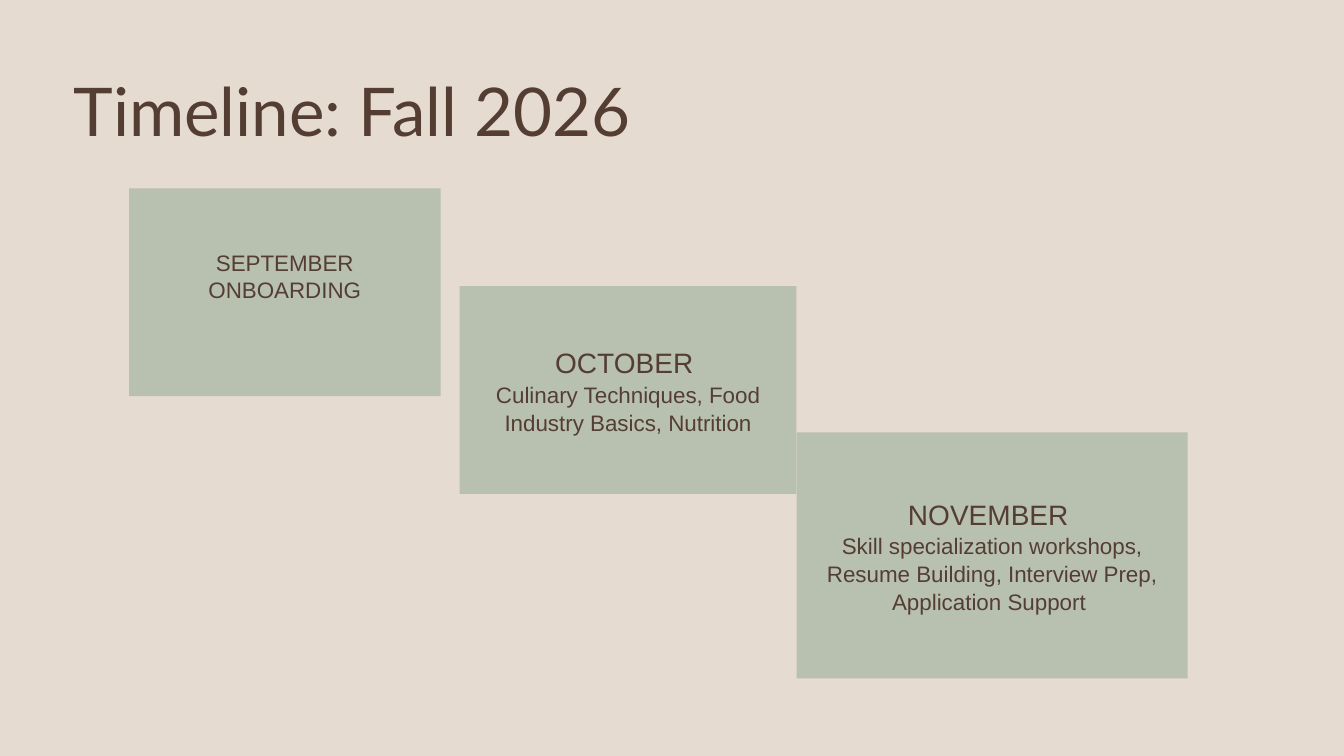
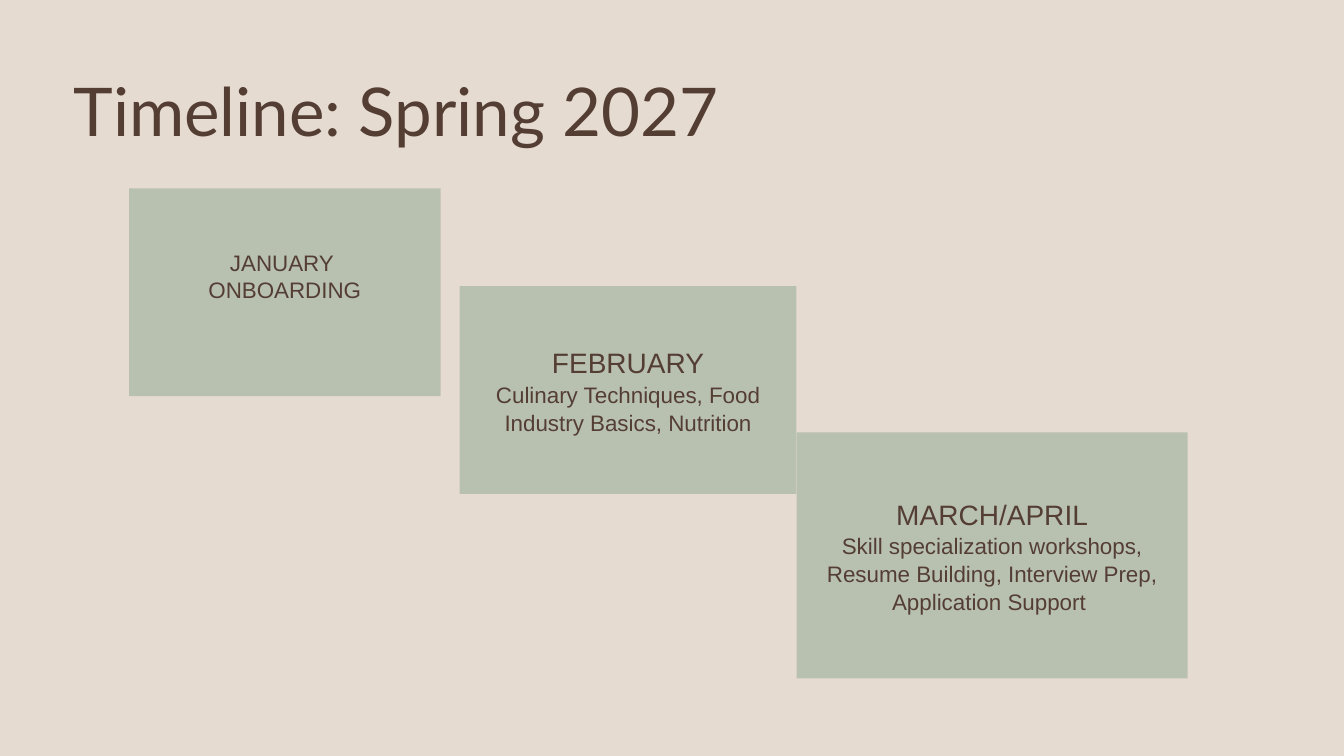
from dataclasses import dataclass

from pptx import Presentation
from pptx.dml.color import RGBColor
from pptx.enum.shapes import MSO_SHAPE as Shape
from pptx.enum.text import MSO_ANCHOR as Anchor, PP_ALIGN as Align
from pptx.util import Inches, Pt


@dataclass(frozen=True)
class Theme:
    background: RGBColor = RGBColor(0xE6, 0xDB, 0xD0)
    card: RGBColor = RGBColor(0xB8, 0xC0, 0xB0)
    text: RGBColor = RGBColor(0x54, 0x3E, 0x34)
    title_font: str = "Lato"
    body_font: str = "Arial"
    title_size: int = 48
    month_size: int = 20
    detail_size: int = 16


@dataclass(frozen=True)
class Box:
    left: float
    top: float
    width: float
    height: float

    def inside(self, parent):
        return Box(parent.left + self.left, parent.top + self.top, self.width, self.height)

    def lengths(self):
        return [Inches(value) for value in (self.left, self.top, self.width, self.height)]


THEME = Theme()
TITLE_BOX = Box(0.63, 0.77, 10, 0.74)
TIMELINE_BOX = Box(1.28, 1.87, 10.5, 4.86)

# Card steps, relative to the timeline box
ONBOARDING_STEP = Box(0, 0, 3.09, 2.06)
BASICS_STEP = Box(3.28, 0.97, 3.34, 2.06)
SKILLS_STEP = Box(6.62, 2.42, 3.88, 2.44)

BASICS = "Culinary Techniques, Food Industry Basics, Nutrition"
SKILLS = "Skill specialization workshops, Resume Building, Interview Prep, Application Support "

TERMS = [
    ("Timeline: Fall 2026", "SEPTEMBER", "OCTOBER ", "NOVEMBER "),
    ("Timeline: Spring 2027", "JANUARY ", "FEBRUARY", "MARCH/APRIL"),
]


def add_run(paragraph, text, font, size):
    run = paragraph.add_run()
    run.text = text
    run.font.name = font
    run.font.size = Pt(size)
    run.font.color.rgb = THEME.text


def set_title(slide, box, text):
    title = slide.shapes.title
    title.left, title.top, title.width, title.height = box.lengths()
    frame = title.text_frame
    frame.vertical_anchor = Anchor.MIDDLE
    paragraph = frame.paragraphs[0]
    paragraph.alignment = Align.LEFT
    paragraph.line_spacing = 0.9
    add_run(paragraph, text, THEME.title_font, THEME.title_size)


def add_card(slide, box, lines, line_spacing=1.0, bottom_inset=0.05):
    """Draw a card holding (text, size) lines."""
    card = slide.shapes.add_shape(Shape.RECTANGLE, *box.lengths())
    card.shadow.inherit = False
    card.fill.solid()
    card.fill.fore_color.rgb = THEME.card
    card.line.fill.background()
    frame = card.text_frame
    frame.word_wrap = True
    frame.vertical_anchor = Anchor.MIDDLE
    frame.margin_bottom = Inches(bottom_inset)
    for index, (text, size) in enumerate(lines):
        paragraph = frame.add_paragraph() if index else frame.paragraphs[0]
        paragraph.alignment = Align.CENTER
        paragraph.line_spacing = line_spacing
        add_run(paragraph, text, THEME.body_font, size)


def add_timeline(slide, box, first_month, second_month, third_month):
    # Onboarding, with its text raised above the middle
    onboarding = [(text, THEME.detail_size) for text in (first_month, "ONBOARDING")]
    add_card(slide, ONBOARDING_STEP.inside(box), onboarding, bottom_inset=0.37)

    # Training months
    for step, month, detail in (
        (BASICS_STEP, second_month, BASICS),
        (SKILLS_STEP, third_month, SKILLS),
    ):
        lines = [(month, THEME.month_size), (detail, THEME.detail_size)]
        add_card(slide, step.inside(box), lines, line_spacing=1.05)


def add_term_slide(presentation, title, *months):
    slide = presentation.slides.add_slide(presentation.slide_layouts.get_by_name("Title Only"))
    set_title(slide, TITLE_BOX, title)
    add_timeline(slide, TIMELINE_BOX, *months)


def main():
    presentation = Presentation()
    presentation.slide_width = Inches(13.33)
    presentation.slide_height = Inches(7.5)

    # Shared background
    fill = presentation.slide_master.background.fill
    fill.solid()
    fill.fore_color.rgb = THEME.background

    for term in TERMS:
        add_term_slide(presentation, *term)
    presentation.save("out.pptx")


if __name__ == "__main__":
    main()
